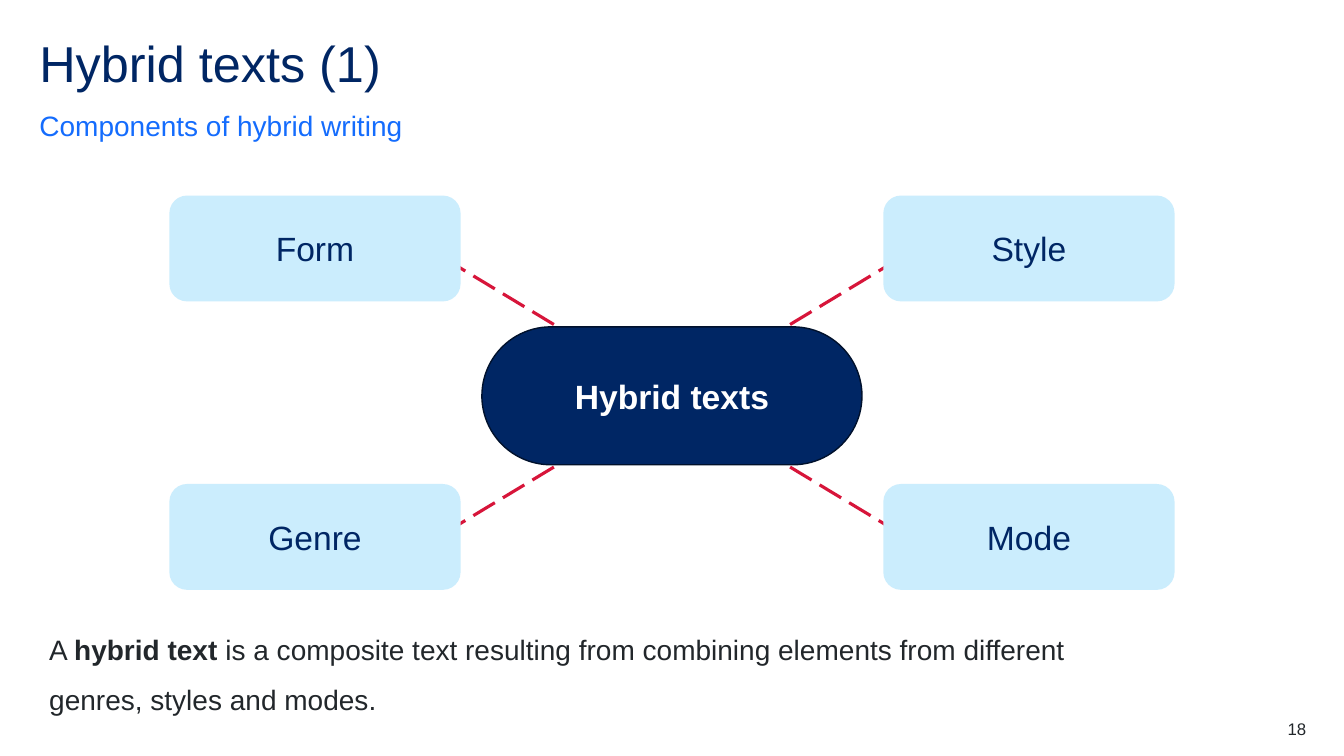
from itertools import product
from lxml import etree
from pptx import Presentation
from pptx.dml.color import RGBColor
from pptx.enum.dml import MSO_LINE
from pptx.enum.shapes import MSO_CONNECTOR, MSO_SHAPE
from pptx.enum.text import MSO_ANCHOR, MSO_AUTO_SIZE, PP_ALIGN
from pptx.oxml.ns import qn
from pptx.util import Pt

NAVY = RGBColor(0x00, 0x26, 0x64)
BLUE = RGBColor(0x14, 0x6C, 0xFD)
PALE = RGBColor(0xCB, 0xED, 0xFD)
RED = RGBColor(0xD7, 0x15, 0x3A)
EDGE = RGBColor(0x00, 0x11, 0x2C)
INK = RGBColor(0x22, 0x27, 0x2B)
WHITE = RGBColor(0xFF, 0xFF, 0xFF)
ROUND = MSO_SHAPE.ROUNDED_RECTANGLE
STRAIGHT = MSO_CONNECTOR.STRAIGHT
DASH = MSO_LINE.LONG_DASH
TOP, MIDDLE, BOTTOM = MSO_ANCHOR.TOP, MSO_ANCHOR.MIDDLE, MSO_ANCHOR.BOTTOM
LEFT, CENTER, RIGHT = PP_ALIGN.LEFT, PP_ALIGN.CENTER, PP_ALIGN.RIGHT
FIXED = MSO_AUTO_SIZE.NONE
FLUSH = dict.fromkeys(
    ("margin_left", "margin_top", "margin_right", "margin_bottom"), 0)
LOOSE = {"line_spacing": 1.5, "space_after": Pt(12)}


def apply(target, values):
    for name, value in values.items():
        setattr(target, name, value)


class Page:
    face = "Arial"

    def __init__(self, slide):
        self.slide = slide
        self.shapes = slide.shapes

    def letter(self, shape, runs, size, color, frame=None, para=None):
        text = shape.text_frame
        apply(text, {"word_wrap": True, "auto_size": FIXED} | (frame or {}))
        line = text.paragraphs[0]
        apply(line, {"alignment": LEFT} | (para or {}))
        for words, bold in runs:
            run = line.add_run()
            run.text = words
            apply(run.font, {"name": self.face, "size": Pt(size), "bold": bold})
            run.font.color.rgb = color
        return line

    def holder(self, index, box, words, size, color, frame, para):
        shape = self.slide.placeholders[index]
        place = zip(("left", "top", "width", "height"), map(Pt, box))
        apply(shape, dict(place))
        line = self.letter(shape, [(words, False)], size, color,
                           FLUSH | frame, para)
        props = line._p.get_or_add_pPr()
        for name in ("marL", "indent"):
            props.set(name, "0")
        etree.SubElement(props, qn("a:buNone"))

    def label(self, box, runs, size, color, frame=None, para=None):
        shape = self.shapes.add_textbox(*map(Pt, box))
        self.letter(shape, runs, size, color, frame, para)

    def node(self, mid, size, words, fill, color, bold=False, edge=None):
        (x, y), (wide, high) = mid, size
        box = (x - wide / 2, y - high / 2, wide, high)
        shape = self.shapes.add_shape(ROUND, *map(Pt, box))
        shape.shadow.inherit = False
        shape.fill.solid()
        shape.fill.fore_color.rgb = fill
        if edge:
            shape.line.color.rgb = edge
            shape.line.width = Pt(1)
        else:
            shape.line.fill.background()
        self.letter(shape, [(words, bold)], 24, color,
                    {"vertical_anchor": MIDDLE}, {"alignment": CENTER})
        return shape

    def link(self, start, end):
        line = self.shapes.add_connector(STRAIGHT, *map(Pt, start + end))
        line.line.color.rgb = RED
        apply(line.line, {"width": Pt(2.25), "dash_style": DASH})
        etree.SubElement(line._element.spPr, qn("a:effectLst"))


def main():
    deck = Presentation()
    apply(deck, {"slide_width": Pt(960), "slide_height": Pt(540)})
    page = Page(deck.slides.add_slide(deck.slide_layouts[1]))

    page.holder(0, (28.1, 28.1, 904, 43.2), "Hybrid texts (1)", 36, NAVY,
                {"vertical_anchor": TOP}, {"line_spacing": 0.9})
    page.holder(1, (28.1, 77, 904, 24.5), "Components of hybrid writing", 20,
                BLUE, {"vertical_anchor": BOTTOM}, LOOSE | {"space_before": 0})

    hub = (480, 282.7)
    corners = list(product((-1, 1), (-1, 1)))
    for down, side in corners:
        page.link(hub, (hub[0] + side * 174, hub[1] + down * 105))
    pill = page.node(hub, (271.5, 98.5), "Hybrid texts", NAVY, WHITE,
                     True, EDGE)
    pill.adjustments[0] = 0.5
    for (down, side), part in zip(corners, ("Form", "Style", "Genre", "Mode")):
        page.node((hub[0] + side * 255, 280.5 + down * 103), (208, 75.6),
                  part, PALE, NAVY)

    page.label((28.1, 436.3, 743.8, 75.6),
               [("A ", False), ("hybrid text ", True),
                ("is a composite text resulting from combining elements "
                 "from different genres, styles and modes.", False)],
               20, INK, para=LOOSE)
    page.label((876.2, 513.4, 56.9, 14.4), [("18", False)], 12, INK,
               FLUSH, {"alignment": RIGHT})
    deck.save("out.pptx")


if __name__ == "__main__":
    main()
